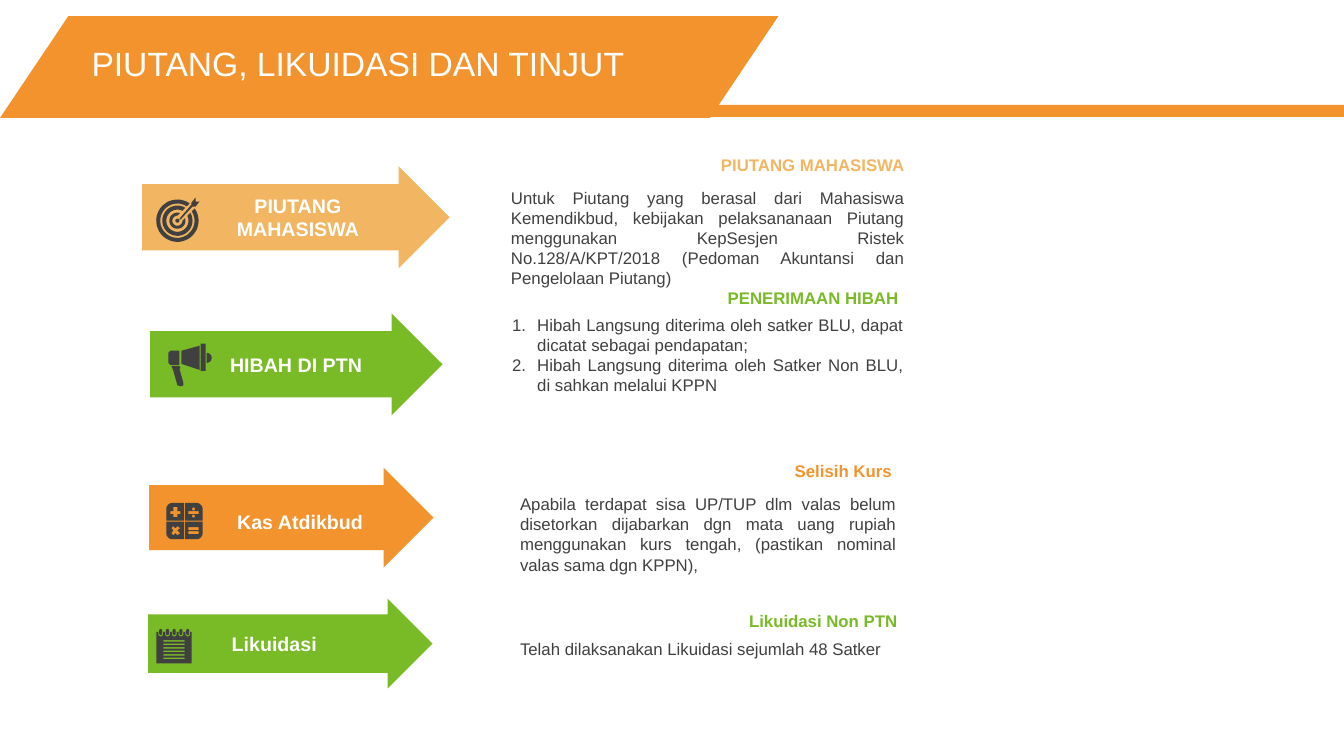
from dataclasses import dataclass
from math import asin, cos, degrees, radians, sin

from lxml import etree
from pptx import Presentation
from pptx.dml.color import RGBColor
from pptx.enum.shapes import MSO_SHAPE
from pptx.enum.text import MSO_ANCHOR, PP_ALIGN
from pptx.oxml.ns import qn
from pptx.shapes.autoshape import Shape
from pptx.slide import Slide
from pptx.text.text import _Paragraph
from pptx.util import Inches, Pt

RECTANGLE = MSO_SHAPE.RECTANGLE
PARALLELOGRAM = MSO_SHAPE.PARALLELOGRAM
RIGHT_ARROW = MSO_SHAPE.RIGHT_ARROW
MIDDLE, TOP = MSO_ANCHOR.MIDDLE, MSO_ANCHOR.TOP
LEFT, CENTER, RIGHT, JUSTIFY = PP_ALIGN.LEFT, PP_ALIGN.CENTER, PP_ALIGN.RIGHT, PP_ALIGN.JUSTIFY

COLORS = {"orange": "F3932D", "sand": "F2B662", "green": "79BA27", "dark": "404040", "white": "FFFFFF"}
FONT = "Arial"
UNITS_PER_INCH = 1000
LIST_INDENT = 0.25

Box = tuple[float, float, float, float]
Contour = list[tuple[float, float]]


@dataclass(frozen=True)
class Block:
    shape_kind: MSO_SHAPE
    box: Box
    color: str
    adjustments: tuple[float, ...] = ()


@dataclass(frozen=True)
class Caption:
    box: Box
    lines: tuple[str, ...]
    color: str
    size: int = 12
    bold: bool = False
    align: PP_ALIGN = LEFT
    numbered: bool = False


ARROW = (0.651, 0.5)
BLOCKS = [
    Block(RECTANGLE, (6.67, 1.04, 6.67, 0.12), "orange"),
    Block(PARALLELOGRAM, (0, 0.16, 7.72, 1.01), "orange", (0.671,)),
    Block(RIGHT_ARROW, (1.41, 1.65, 3.05, 1.01), "sand", ARROW),
    Block(RIGHT_ARROW, (1.49, 3.11, 2.9, 1.01), "green", ARROW),
    Block(RIGHT_ARROW, (1.48, 4.64, 2.82, 0.99), "orange", ARROW),
    Block(RIGHT_ARROW, (1.47, 5.94, 2.82, 0.89), "green", ARROW),
]


def arrow_label(box: Box, text: str, align: PP_ALIGN) -> Caption:
    return Caption(box, (text,), "white", 14, True, align)


def heading(box: Box, text: str, color: str) -> Caption:
    return Caption(box, (text,), color, bold=True, align=RIGHT)


TITLE = Caption((0.81, 0.26, 12.24, 0.79), ("PIUTANG, LIKUIDASI DAN TINJUT",), "white", 24)
CAPTIONS = [
    arrow_label((1.83, 1.87, 2.25, 0.57), "PIUTANG MAHASISWA", CENTER),
    arrow_label((1.54, 3.45, 2.15, 0.34), "HIBAH DI PTN", RIGHT),
    arrow_label((2.14, 5.01, 1.56, 0.34), "Kas Atdikbud", RIGHT),
    arrow_label((2.2, 6.22, 1.63, 0.34), "Likuidasi", LEFT),
    heading((4.97, 1.49, 4.1, 0.3), "PIUTANG MAHASISWA", "sand"),
    Caption((4.97, 1.81, 4.1, 1.11), (
        "Untuk Piutang yang berasal dari Mahasiswa Kemendikbud, kebijakan pelaksananaan Piutang "
        "menggunakan KepSesjen Ristek No.128/A/KPT/2018 (Pedoman Akuntansi dan Pengelolaan Piutang)",
    ), "dark", align=JUSTIFY),
    heading((4.93, 2.81, 4.08, 0.3), "PENERIMAAN HIBAH", "green"),
    Caption((4.98, 3.07, 4.08, 0.91), (
        "Hibah Langsung diterima oleh satker BLU, dapat dicatat sebagai pendapatan;",
        "Hibah Langsung diterima oleh Satker Non BLU, di sahkan melalui KPPN",
    ), "dark", align=JUSTIFY, numbered=True),
    heading((5.06, 4.52, 3.93, 0.3), "Selisih Kurs ", "orange"),
    Caption((5.06, 4.85, 3.93, 0.91), (
        "Apabila terdapat sisa UP/TUP dlm valas belum disetorkan dijabarkan dgn mata uang rupiah "
        "menggunakan kurs tengah, (pastikan nominal valas sama dgn KPPN), ",
    ), "dark", align=JUSTIFY),
    heading((5.07, 6.01, 3.93, 0.27), "Likuidasi Non PTN", "green"),
    Caption((5.06, 6.29, 3.93, 0.3), ("Telah dilaksanakan Likuidasi sejumlah 48 Satker",), "dark"),
]


def arc(x: float, y: float, radius: float, start: float, end: float) -> Contour:
    steps = max(6, int(abs(end - start) / 8))
    angles = [radians(start + (end - start) * step / steps) for step in range(steps + 1)]
    return [(x + radius * cos(angle), y + radius * sin(angle)) for angle in angles]


def rectangle(x: float, y: float, width: float, height: float) -> Contour:
    return [(x, y), (x + width, y), (x + width, y + height), (x, y + height)]


def split_ring(x: float, y: float, outer: float, inner: float) -> Contour:
    outer_gap, inner_gap = (degrees(asin(0.035 / radius)) for radius in (outer, inner))
    return arc(x, y, outer, outer_gap - 45, 315 - outer_gap) + arc(x, y, inner, 315 - inner_gap, inner_gap - 45)


def target_icon() -> list[Contour]:
    x, y = 1.76, 2.19
    dart = [(1.78, 2.17), (1.9, 2.03), (1.9, 2.01), (1.94, 1.96), (1.94, 2), (1.98, 2),
            (1.94, 2.05), (1.91, 2.05), (1.79, 2.18)]
    rings = [split_ring(x, y, *radii) for radii in ((0.21, 0.17), (0.15, 0.11), (0.08, 0.05))]
    return [*rings, arc(x, y, 0.02, 0, 360), dart]


def megaphone_icon() -> list[Contour]:
    handle = [(1.78, 3.63), (1.79, 3.65), (1.78, 3.66), (1.82, 3.8), (1.82, 3.82), (1.81, 3.83),
              (1.78, 3.83), (1.76, 3.82), (1.72, 3.68), (1.7, 3.63)]
    body = [(1.69, 3.48), (1.78, 3.48), (1.78, 3.62), (1.69, 3.62), (1.67, 3.6), (1.67, 3.5)]
    horn = [(1.98, 3.43), (1.98, 3.67), (1.8, 3.61), (1.8, 3.48)]
    return [handle, body, horn, rectangle(1.99, 3.41, 0.05, 0.27), arc(2.05, 3.55, 0.05, -90, 90)]


def calculator_icon() -> list[Contour]:
    x, y, near, far, radius = 1.83, 5.17, 0.005, 0.18, 0.06
    corner = [(near, near), (far, near), *arc(far - radius, far - radius, radius, 0, 90), (near, far)]
    keys = [[(x + across * dx, y + down * dy) for dx, dy in corner] for across in (-1, 1) for down in (-1, 1)]
    plus = [(1.72, 5.03), (1.72, 5.07), (1.69, 5.07), (1.69, 5.1), (1.72, 5.1), (1.72, 5.13),
            (1.76, 5.13), (1.76, 5.1), (1.79, 5.1), (1.79, 5.07), (1.76, 5.07), (1.76, 5.03)]
    times = [(1.72, 5.22), (1.7, 5.24), (1.72, 5.26), (1.7, 5.29), (1.72, 5.31), (1.74, 5.29),
             (1.76, 5.31), (1.79, 5.29), (1.76, 5.26), (1.79, 5.24), (1.76, 5.22), (1.74, 5.24)]
    bars = [rectangle(1.87, top, 0.1, 0.03) for top in (5.07, 5.23, 5.27)]
    dots = [arc(1.92, center, 0.015, 0, 360) for center in (5.05, 5.12)]
    return [*keys, plus, times, *bars, *dots]


def notepad_icon() -> list[Contour]:
    contours = [rectangle(1.55, 6.27, 0.35, 0.31)]
    contours += [rectangle(1.62, 6.35 + 0.035 * row, 0.21, 0.015) for row in range(6)]
    for index in range(5):
        x = 1.594 + 0.067 * index
        contours.append([*arc(x, 6.29, 0.024, 0, 180), (x - 0.024, 6.27), (x + 0.024, 6.27)])
        contours.append(arc(x, 6.285, 0.015, 0, 180) + arc(x, 6.255, 0.015, 180, 360))
    return contours


def paint(shape: Shape, color: str) -> None:
    shape.shadow.inherit = False
    shape.fill.solid()
    shape.fill.fore_color.rgb = RGBColor.from_string(COLORS[color])
    shape.line.fill.background()


def draw_block(slide: Slide, block: Block) -> None:
    shape = slide.shapes.add_shape(block.shape_kind, *map(Inches, block.box))
    for index, value in enumerate(block.adjustments):
        shape.adjustments[index] = value
    paint(shape, block.color)


def draw_icon(slide: Slide, contours: list[Contour]) -> None:
    scaled = [[(x * UNITS_PER_INCH, y * UNITS_PER_INCH) for x, y in contour] for contour in contours]
    builder = slide.shapes.build_freeform(*scaled[0][0], scale=Inches(1) / UNITS_PER_INCH)
    for index, contour in enumerate(scaled):
        if index:
            builder.move_to(*contour[0])
        builder.add_line_segments(contour[1:], close=True)
    paint(builder.convert_to_shape(), "dark")


def number_paragraph(paragraph: _Paragraph) -> None:
    properties = paragraph._p.get_or_add_pPr()
    properties.set("marL", str(Inches(LIST_INDENT)))
    properties.set("indent", str(-Inches(LIST_INDENT)))
    etree.SubElement(properties, qn("a:buFont"), typeface="+mj-lt")
    etree.SubElement(properties, qn("a:buAutoNum"), type="arabicPeriod")


def draw_caption(slide: Slide, caption: Caption, anchor: MSO_ANCHOR = TOP) -> Shape:
    shape = slide.shapes.add_textbox(*map(Inches, caption.box))
    frame = shape.text_frame
    frame.word_wrap = True
    frame.vertical_anchor = anchor
    for index, line in enumerate(caption.lines):
        paragraph = frame.add_paragraph() if index else frame.paragraphs[0]
        paragraph.alignment = caption.align
        if caption.numbered:
            number_paragraph(paragraph)
        run = paragraph.add_run()
        run.text = line
        run.font.name = FONT
        run.font.size = Pt(caption.size)
        run.font.bold = caption.bold
        run.font.color.rgb = RGBColor.from_string(COLORS[caption.color])
    return shape


def main() -> None:
    presentation = Presentation()
    presentation.slide_width, presentation.slide_height = Inches(13.33), Inches(7.5)
    slide = presentation.slides.add_slide(presentation.slide_layouts[6])
    for block in BLOCKS:
        draw_block(slide, block)
    title = draw_caption(slide, TITLE, MIDDLE).text_frame.paragraphs[0]
    title.line_spacing, title.space_before = 0.9, Pt(10)
    for caption in CAPTIONS:
        draw_caption(slide, caption)
    for contours in (target_icon(), megaphone_icon(), calculator_icon(), notepad_icon()):
        draw_icon(slide, contours)
    presentation.save("out.pptx")


if __name__ == "__main__":
    main()
